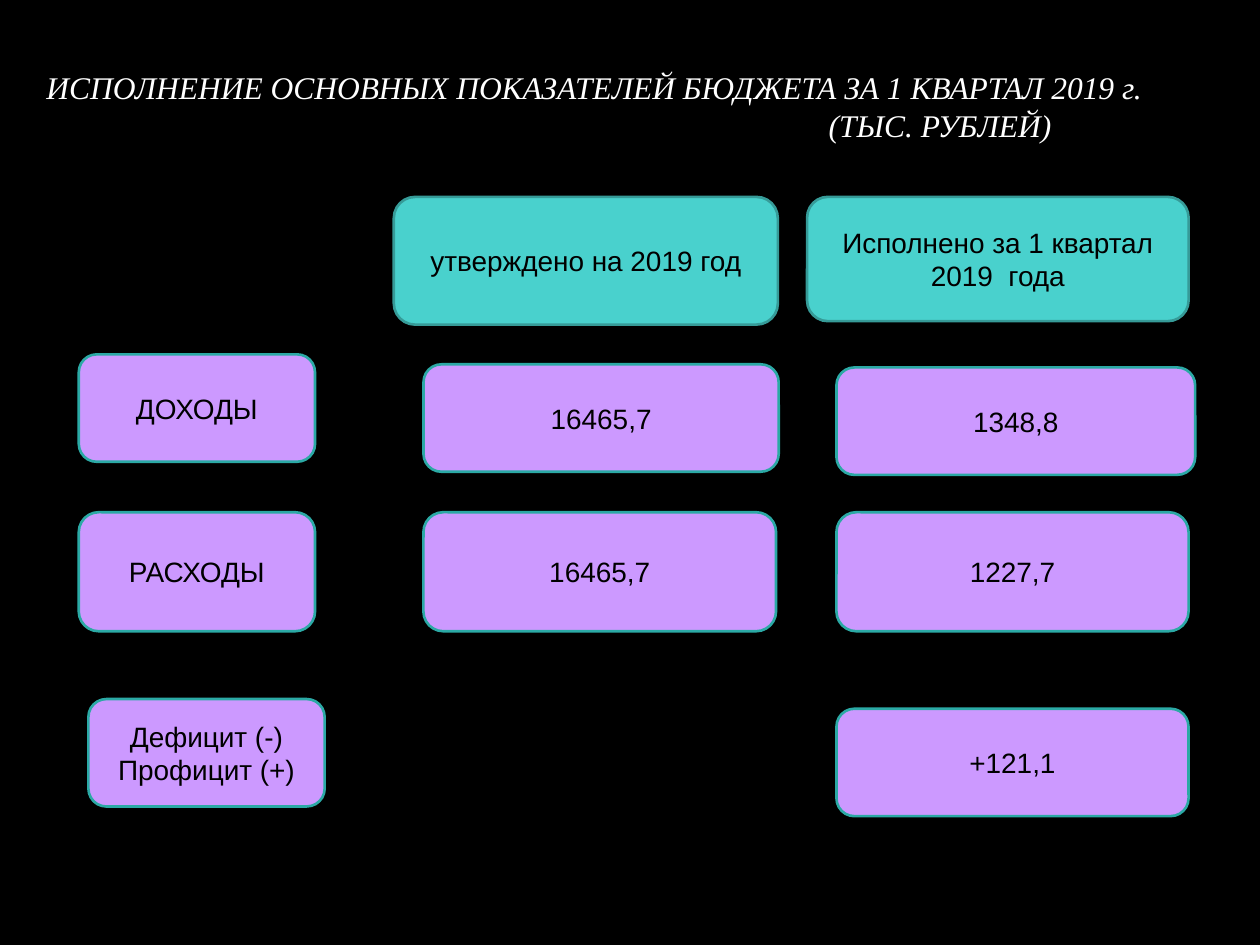
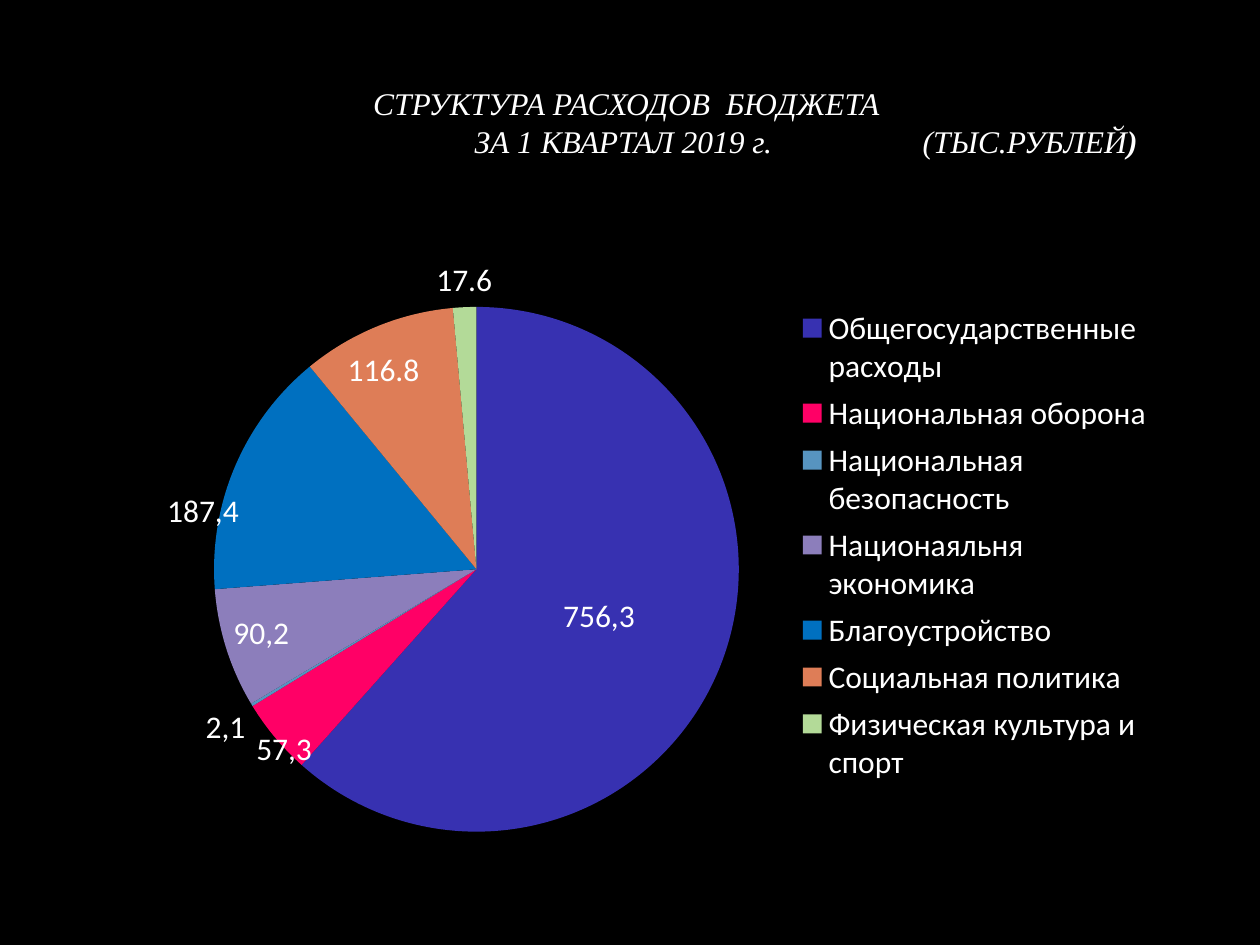
from lxml import etree
from pptx import Presentation
from pptx.chart.data import CategoryChartData
from pptx.dml.color import RGBColor
from pptx.enum.chart import XL_CHART_TYPE, XL_LABEL_POSITION, XL_LEGEND_POSITION
from pptx.enum.shapes import MSO_SHAPE
from pptx.enum.text import MSO_ANCHOR, MSO_AUTO_SIZE, PP_ALIGN
from pptx.oxml.ns import qn
from pptx.util import Pt

PIE = XL_CHART_TYPE.PIE
RIGHT = XL_LEGEND_POSITION.RIGHT
MID = XL_LABEL_POSITION.CENTER
IN = XL_LABEL_POSITION.INSIDE_END
OUT = XL_LABEL_POSITION.OUTSIDE_END
ROUND = MSO_SHAPE.ROUNDED_RECTANGLE
CENTER = PP_ALIGN.CENTER
LEFT = PP_ALIGN.LEFT
MIDDLE = MSO_ANCHOR.MIDDLE
FIXED = MSO_AUTO_SIZE.NONE

COLORS = {
    "back": "000000", "light": "FFFFFF", "dark": "000000",
    "teal": "49D1CD", "teal edge": "369B98",
    "lilac": "CC99FF", "lilac edge": "2BA9A5",
}
TITLE_FONT, BOX_FONT, CHART_FONT = "Times New Roman", "Arial", "Calibri"

# Box rows: kind, top, height, then (left, width, lines) for each box
ROWS = [
    ("teal", 112.5, 73, [(225, 219.5, ["утверждено на 2019 год"])]),
    ("teal", 112.5, 71, [(461.2, 218, ["Исполнено за 1 квартал 2019  года"])]),
    ("lilac", 202.5, 61.4, [(45, 135, ["ДОХОДЫ"])]),
    ("lilac", 208.2, 61.4, [(242, 203, ["16465,7"])]),
    ("lilac", 210, 61.4, [(478, 205, ["1348,8"])]),
    ("lilac", 292.7, 68, [(45, 135, ["РАСХОДЫ"]), (242, 201.5, ["16465,7"]),
                          (478, 201.2, ["1227,7"])]),
    ("lilac", 399.5, 61.4, [(50.5, 135, ["Дефицит (-)", "Профицит (+)"])]),
    ("lilac", 405, 61.4, [(478, 201.2, ["+121,1"])]),
]

# Slices: name, value, own label text, colour, label position, label shift
SLICES = [
    ("Общегосударственные расходы", 756.3, "756,3", "3731B1", MID, None),
    ("Национальная оборона", 57.3, "57,3", "FF0066", OUT, (0.04, -0.02)),
    ("Национальная безопасность", 2.1, "2,1", "5794C0", OUT, None),
    ("Национаяльня экономика", 90.2, "90,2", "8C7EBB", IN, (0, 0.01)),
    ("Благоустройство", 187.4, "187,4", "0070C0", OUT, (0.01, 0.11)),
    ("Социальная политика", 116.8, "116.8", "DE7D57", IN, (-0.03, 0.03)),
    ("Физическая культура и спорт", 17.6, None, "B3DA98", OUT, None),
]


def rgb(name):
    return RGBColor.from_string(COLORS.get(name, name))


def style(font, face, size, color):
    font.name, font.size = face, Pt(size)
    font.color.rgb = rgb(color)


def add_run(para, text, face, size, color):
    run = para.add_run()
    run.text = text
    style(run.font, face, size, color)
    return run


def set_title(slide, box, lines):
    """Fill the title; each line is (tab stops, texts)."""
    title = slide.shapes.title
    title.left, title.top, title.width, title.height = map(Pt, box)
    frame = title.text_frame
    frame.auto_size, frame.vertical_anchor = FIXED, MIDDLE
    for i, (tabs, texts) in enumerate(lines):
        para = frame.add_paragraph() if i else frame.paragraphs[0]
        para.alignment = LEFT
        if tabs:
            props = para._p.get_or_add_pPr()
            stops = etree.SubElement(props, qn("a:tabLst"))
            for tab in tabs:
                etree.SubElement(stops, qn("a:tab"), pos=str(Pt(tab)), algn="l")
        for text in texts:
            run = add_run(para, text, TITLE_FONT, 18, "light")
            run.font.italic = True
            run.font.bold = text == ")"


def add_box(slide, kind, left, top, width, height, lines):
    box = slide.shapes.add_shape(ROUND, *map(Pt, (left, top, width, height)))
    box.shadow.inherit = False
    box.fill.solid()
    box.fill.fore_color.rgb = rgb(kind)
    box.line.color.rgb = rgb(kind + " edge")
    box.line.width = Pt(1.5)
    frame = box.text_frame
    frame.word_wrap, frame.vertical_anchor = True, MIDDLE
    for i, line in enumerate(lines):
        para = frame.add_paragraph() if i else frame.paragraphs[0]
        para.alignment = CENTER
        add_run(para, line, BOX_FONT, 16, "dark")


def set_layout(part, **marks):
    """Give a chart part a manual layout, in fractions of the chart."""
    old = part.find(qn("c:layout"))
    if old is not None:
        part.remove(old)
    layout = etree.Element(qn("c:layout"))
    manual = etree.SubElement(layout, qn("c:manualLayout"))
    for key, val in marks.items():
        etree.SubElement(manual, qn("c:" + key), val=str(val))
    heads = (qn("c:legendPos"), qn("c:idx"))
    part.insert(1 if part[0].tag in heads else 0, layout)


def add_pie(slide):
    data = CategoryChartData(number_format="0.0")
    data.categories = [item[0] for item in SLICES]
    data.add_series("Series 1", [item[1] for item in SLICES])
    area = map(Pt, (55, 140.5, 612, 345.5))
    chart = slide.shapes.add_chart(PIE, *area, data).chart
    style(chart.font, CHART_FONT, 18, "light")
    chart.has_title = False
    chart.has_legend = True
    chart.legend.position = RIGHT
    chart.legend.include_in_layout = False
    plot = chart.plots[0]
    plot.vary_by_categories = True
    series = plot.series[0]
    series.data_labels.show_value = True
    style(series.data_labels.font, CHART_FONT, 18, "light")
    for i, (_, _, text, color, spot, _) in enumerate(SLICES):
        fmt = series.points[i].format
        fmt.fill.solid()
        fmt.fill.fore_color.rgb = rgb(color)
        fmt.line.fill.background()
        label = series.points[i].data_label
        if text:
            para = label.text_frame.paragraphs[0]
            add_run(para, text, CHART_FONT, 18, "light")
        else:
            style(label.font, CHART_FONT, 18, "light")
        label.position = spot
    root = chart.element
    for label, item in zip(root.iter(qn("c:dLbl")), SLICES):
        if item[-1]:
            set_layout(label, x=item[-1][0], y=item[-1][1])
    set_layout(next(root.iter(qn("c:plotArea"))), layoutTarget="inner",
               xMode="edge", yMode="edge", x=0.11, y=0.1, w=0.49, h=0.87)
    set_layout(next(root.iter(qn("c:legend"))), xMode="edge", yMode="edge",
               x=0.65, y=0.09, w=0.34, h=0.81)


def main():
    deck = Presentation()
    deck.slide_width, deck.slide_height = Pt(720), Pt(540)
    fill = deck.slide_master.background.fill
    fill.solid()
    fill.fore_color.rgb = rgb("back")
    plain = deck.slide_layouts.get_by_name("Title Only")

    totals = deck.slides.add_slide(plain)
    set_title(totals, (19.3, 26.7, 684, 67.5), [
        ([], ["ИСПОЛНЕНИЕ ОСНОВНЫХ ПОКАЗАТЕЛЕЙ БЮДЖЕТА ЗА 1 КВАРТАЛ 2019 г."]),
        ([447], ["\t(ТЫС. РУБЛЕЙ)"]),
    ])
    for kind, top, height, boxes in ROWS:
        for left, width, lines in boxes:
            add_box(totals, kind, left, top, width, height, lines)

    costs = deck.slides.add_slide(plain)
    set_title(costs, (36, 26.2, 648, 86.5), [
        ([170], ["\tСТРУКТУРА РАСХОДОВ  БЮДЖЕТА"]),
        ([228, 484], ["\tЗА 1 КВАРТАЛ 2019 г.\t(ТЫС.РУБЛЕЙ", ")"]),
    ])
    add_pie(costs)
    deck.save("out.pptx")


if __name__ == "__main__":
    main()
